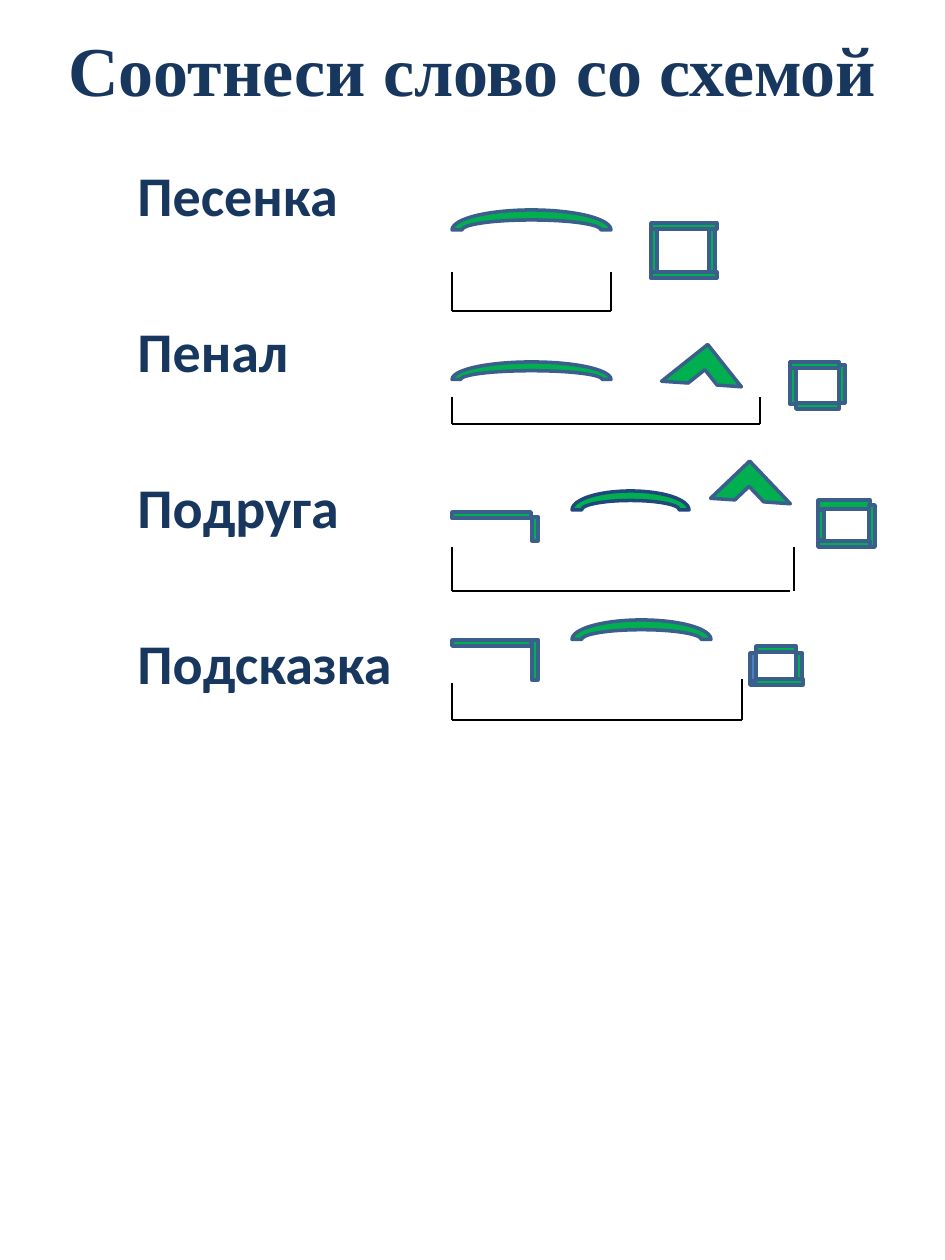
import pptx
import pptx.util
import pptx.dml.color
import pptx.enum.shapes
import pptx.enum.text
import pptx.oxml.ns
import lxml.etree

EMU_PER_PX = 914400 / 126
COLORS = {"ink": "17375E", "green": "00B050", "edge": "3A5F8C",
          "dark_edge": "1F497D", "blue": "4F81BD", "black": "000000"}
SHAPES = pptx.enum.shapes.MSO_SHAPE
BRACKET_LEFT = 452

WORDS = ["Песенка", "Пенал", "Подруга", "Подсказка"]
ROOTS = [(452, 210, 159, 40, "edge"), (452, 362, 159, 35, "edge"),
         (572, 491, 117, 38, "dark_edge"), (572, 620, 139, 39, "edge")]
SUFFIXES = [(672, 357, 141.5, True), (721, 474, 46.4, False)]
PREFIX_BARS = [(452, 512, 79, 6), (532, 517, 6, 24),
               (452, 640, 79, 6), (532, 640, 6, 40)]
ENDING_BARS = [
    (651, 229, 6, 43), (651, 223, 66, 6), (709, 229, 6, 43), (651, 272, 66, 6),
    (790, 362, 6, 42), (796, 403, 43, 6), (790, 362, 49, 6), (839, 365, 6, 38),
    (818, 510, 6, 30), (818, 500, 52, 9), (869, 505, 6, 42), (818, 541, 52, 6),
    (756, 646, 40, 6), (796, 653, 6, 28), (750, 679, 53, 6),
]
BLUE_BAR = (750, 653, 6, 28)
BRACKETS = [(272, 272, 311, 611, 611), (397, 397, 424, 760, 760),
            (547, 547, 591, 790, 794), (683, 679, 720, 742, 742)]


def px(value):
    return pptx.util.Emu(round(value * EMU_PER_PX))


def color(name):
    return pptx.dml.color.RGBColor.from_string(COLORS[name])


def style_text(para, size, font_name):
    para.font.size = pptx.util.Pt(size)
    para.font.name = font_name
    para.font.bold = True
    para.font.color.rgb = color("ink")


def add_title(page):
    title = page.shapes.title
    title.left, title.top, title.width, title.height = px(0), px(0), px(945), px(137)
    frame = title.text_frame
    frame.text = "Соотнеси слово со схемой"
    frame.vertical_anchor = pptx.enum.text.MSO_ANCHOR.MIDDLE
    para = frame.paragraphs[0]
    para.alignment = pptx.enum.text.PP_ALIGN.CENTER
    style_text(para, 40, "Times New Roman")


def add_words(page):
    box = page.shapes.add_textbox(px(87), px(154), px(810), px(830))
    frame = box.text_frame
    frame.word_wrap = True
    for index, word in enumerate(WORDS):
        para = frame.paragraphs[0] if index == 0 else frame.add_paragraph()
        para.text = word
        para._p.get_or_add_pPr().set("marL", str(px(38)))
        if index:
            para.space_before = pptx.util.Pt(50.7)
        style_text(para, 32, "Calibri")


def add_part(page, kind, left, top, width, height, fill="green", edge="edge"):
    part = page.shapes.add_shape(kind, px(left), px(top), px(width), px(height))
    part.shadow.inherit = False
    part.fill.solid()
    part.fill.fore_color.rgb = color(fill)
    part.line.color.rgb = color(edge)
    part.line.width = pptx.util.Pt(2)
    return part


def add_suffix(page, left, top, angle, flipped):
    suffix = add_part(page, SHAPES.HALF_FRAME, left, top, 59, 54)
    suffix.rotation = angle
    if flipped:
        suffix._element.spPr.xfrm.set("flipV", "1")


def add_line(page, x1, y1, x2, y2):
    line = page.shapes.add_connector(
        pptx.enum.shapes.MSO_CONNECTOR.STRAIGHT, px(x1), px(y1), px(x2), px(y2))
    line.line.color.rgb = color("black")
    line.line.width = pptx.util.Pt(0.75)
    lxml.etree.SubElement(line._element.spPr, pptx.oxml.ns.qn("a:effectLst"))


def add_stem_bracket(page, left_top, right_top, bottom, base_end, right):
    add_line(page, BRACKET_LEFT, left_top, BRACKET_LEFT, bottom)
    add_line(page, BRACKET_LEFT, bottom, base_end, bottom)
    add_line(page, right, bottom, right, right_top)


def main():
    deck = pptx.Presentation()
    deck.slide_width, deck.slide_height = px(945), px(1260)
    page = deck.slides.add_slide(deck.slide_layouts[5])
    add_title(page)
    add_words(page)
    for left, top, width, height, edge in ROOTS:
        add_part(page, SHAPES.BLOCK_ARC, left, top, width, height, edge=edge)
    for suffix in SUFFIXES:
        add_suffix(page, *suffix)
    for bar in PREFIX_BARS + ENDING_BARS:
        add_part(page, SHAPES.RECTANGLE, *bar)
    add_part(page, SHAPES.RECTANGLE, *BLUE_BAR, fill="blue")
    for bracket in BRACKETS:
        add_stem_bracket(page, *bracket)
    deck.save("out.pptx")


if __name__ == "__main__":
    main()
